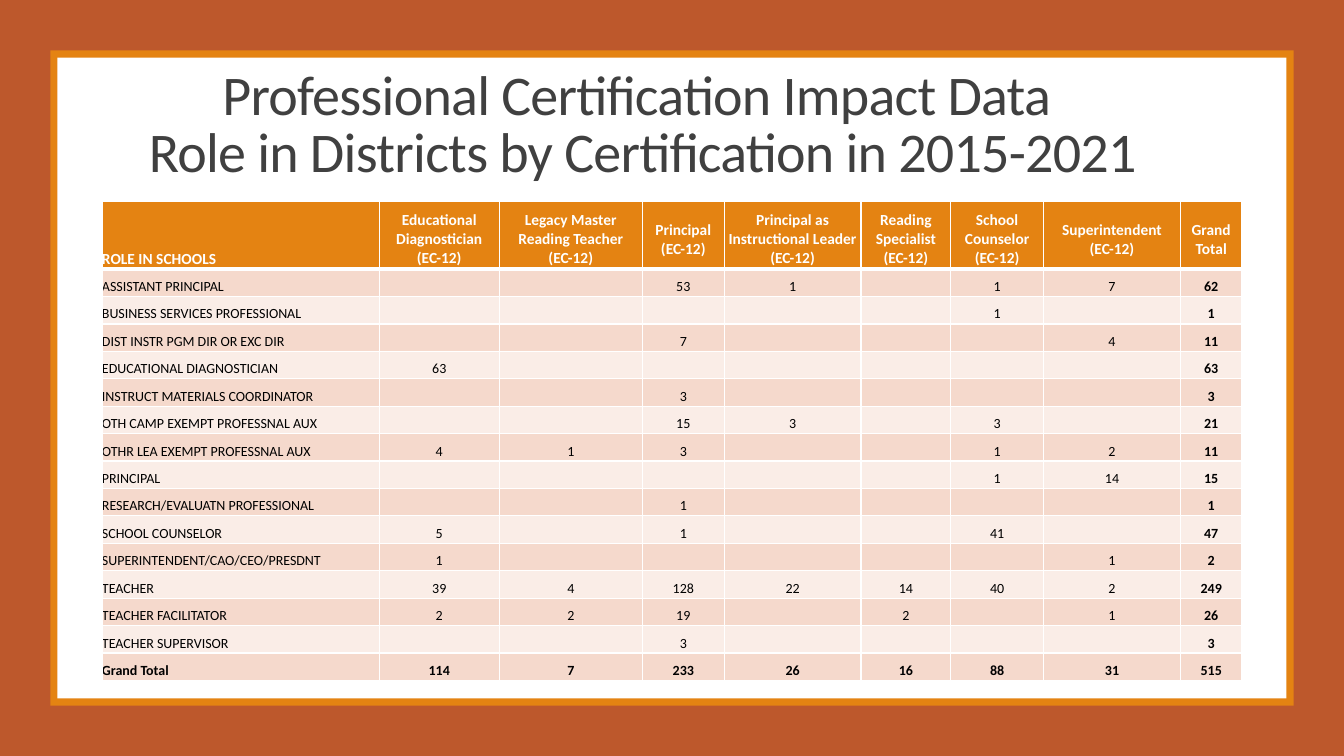
import lxml.etree
import pptx
import pptx.dml.color
import pptx.enum.shapes
import pptx.enum.text
import pptx.oxml.ns
import pptx.util

Cm = pptx.util.Cm
Pt = pptx.util.Pt
qn = pptx.oxml.ns.qn
ALIGN = pptx.enum.text.PP_ALIGN
ANCHOR = pptx.enum.text.MSO_ANCHOR

FONT = "Calibri"
RUST, AMBER, WHITE, BLACK, GREY = "BD582C", "E48312", "FFFFFF", "000000", "404040"
BANDS = ("F5D9CC", "FAEDE7")
WIDTHS = (6.99, 3.02, 3.61, 2.06, 3.45, 2.26, 2.34, 3.45, 1.55)
HEAD = 1.7
TITLE = ("Professional Certification Impact Data \v"
         "Role in Districts by Certification in 2015-2021")
ROWS = (
    ("ROLE IN SCHOOLS", "Educational Diagnostician (EC-12)",
     "Legacy Master Reading Teacher (EC-12)", "Principal (EC-12)",
     "Principal as Instructional Leader (EC-12)", "Reading Specialist (EC-12)",
     "School Counselor (EC-12)", "Superintendent (EC-12)", "Grand Total"),
    ("ASSISTANT PRINCIPAL", "", "", 53, 1, "", 1, 7, 62),
    ("BUSINESS SERVICES PROFESSIONAL", "", "", "", "", "", 1, "", 1),
    ("DIST INSTR PGM DIR OR EXC DIR", "", "", 7, "", "", "", 4, 11),
    ("EDUCATIONAL DIAGNOSTICIAN", 63, "", "", "", "", "", "", 63),
    ("INSTRUCT MATERIALS COORDINATOR", "", "", 3, "", "", "", "", 3),
    ("OTH CAMP EXEMPT PROFESSNAL AUX", "", "", 15, 3, "", 3, "", 21),
    ("OTHR LEA EXEMPT PROFESSNAL AUX", 4, 1, 3, "", "", 1, 2, 11),
    ("PRINCIPAL", "", "", "", "", "", 1, 14, 15),
    ("RESEARCH/EVALUATN PROFESSIONAL", "", "", 1, "", "", "", "", 1),
    ("SCHOOL COUNSELOR", 5, "", 1, "", "", 41, "", 47),
    ("SUPERINTENDENT/CAO/CEO/PRESDNT", 1, "", "", "", "", "", 1, 2),
    ("TEACHER", 39, 4, 128, 22, 14, 40, 2, 249),
    ("TEACHER FACILITATOR", 2, 2, 19, "", 2, "", 1, 26),
    ("TEACHER SUPERVISOR", "", "", 3, "", "", "", "", 3),
    ("Grand Total", 114, 7, 233, 26, 16, 88, 31, 515),
)


def paint(fill, tint):
    """Fill with a solid hex colour."""
    fill.solid()
    fill.fore_color.rgb = pptx.dml.color.RGBColor.from_string(tint)


def style(para, size, tint, bold=False):
    """Set the font of a whole paragraph."""
    font = para.font
    font.name, font.size, font.bold = FONT, Pt(size), bold
    paint(font.fill, tint)


def frame(slide, box):
    """Nest the coloured rectangles inside the box."""
    left, top, width, height = box
    for gap, tint in ((0, RUST), (1.27, AMBER), (1.45, WHITE)):
        rect = slide.shapes.add_shape(
            pptx.enum.shapes.MSO_SHAPE.RECTANGLE, Cm(left + gap), Cm(top + gap),
            Cm(width - 2 * gap), Cm(height - 2 * gap))
        paint(rect.fill, tint)
        rect.line.fill.background()
        rect.shadow.inherit = False


def head(slide, box):
    """Place the title in the box, in front of the frame."""
    title = slide.shapes.title
    slide.shapes._spTree.append(title._element)
    title.left, title.top, title.width, title.height = map(Cm, box)
    text = title.text_frame
    text.text = TITLE
    text.word_wrap = True
    text.auto_size = pptx.enum.text.MSO_AUTO_SIZE.NONE
    text.vertical_anchor = ANCHOR.TOP
    para = text.paragraphs[0]
    para.alignment = ALIGN.CENTER
    para.line_spacing = 0.85
    style(para, 40, GREY)
    para.font._element.set("spc", "-50")


def edge(cell, row):
    """Draw white borders, thick under the header row."""
    thick = {("lnB", 0), ("lnT", 1)}
    for side in ("lnL", "lnR", "lnT", "lnB"):
        width = Pt(3 if (side, row) in thick else 1)
        line = lxml.etree.SubElement(
            cell._tc.get_or_add_tcPr(), qn("a:" + side), w=str(width))
        fill = lxml.etree.SubElement(line, qn("a:solidFill"))
        lxml.etree.SubElement(fill, qn("a:srgbClr"), val=WHITE)


def fill(cell, row, col, value):
    """Write and format one table cell."""
    top = row == 0
    size = 11 if top else 10
    cell.margin_left = cell.margin_right = cell.margin_bottom = 0
    cell.margin_top = Cm(0.2)
    cell.vertical_anchor = ANCHOR.BOTTOM if top and col == 0 else ANCHOR.MIDDLE
    edge(cell, row)
    paint(cell.fill, AMBER if top else BANDS[(row - 1) % 2])
    cell.text = str(value)
    para = cell.text_frame.paragraphs[0]
    para.alignment = ALIGN.CENTER if col else ALIGN.LEFT
    bold = row in (0, len(ROWS) - 1) or col == len(WIDTHS) - 1
    style(para, size, WHITE if top else BLACK, bold)
    if value == "":
        para._p.get_or_add_endParaRPr().set("sz", str(size * 100))


def grid(slide, box):
    """Build the certification table in the box."""
    table = slide.shapes.add_table(len(ROWS), len(WIDTHS), *map(Cm, box)).table
    table.first_row = table.horz_banding = False
    for col, width in zip(table.columns, WIDTHS):
        col.width = Cm(box[2] * width / sum(WIDTHS))
    for row, line in enumerate(ROWS):
        rest = (box[3] - HEAD) / (len(ROWS) - 1)
        table.rows[row].height = Cm(rest if row else HEAD)
        for col, value in enumerate(line):
            fill(table.cell(row, col), row, col, value)


def main():
    """Build and save the slide."""
    deck = pptx.Presentation()
    deck.slide_width, deck.slide_height = Cm(33.87), Cm(19.05)
    slide = deck.slides.add_slide(deck.slide_layouts[5])
    frame(slide, (0, 0, 33.87, 19.05))
    grid(slide, (2.57, 5.08, 28.73, 12.07))
    head(slide, (2.24, 1.63, 27.91, 1.75))
    deck.save("out.pptx")


if __name__ == "__main__":
    main()
